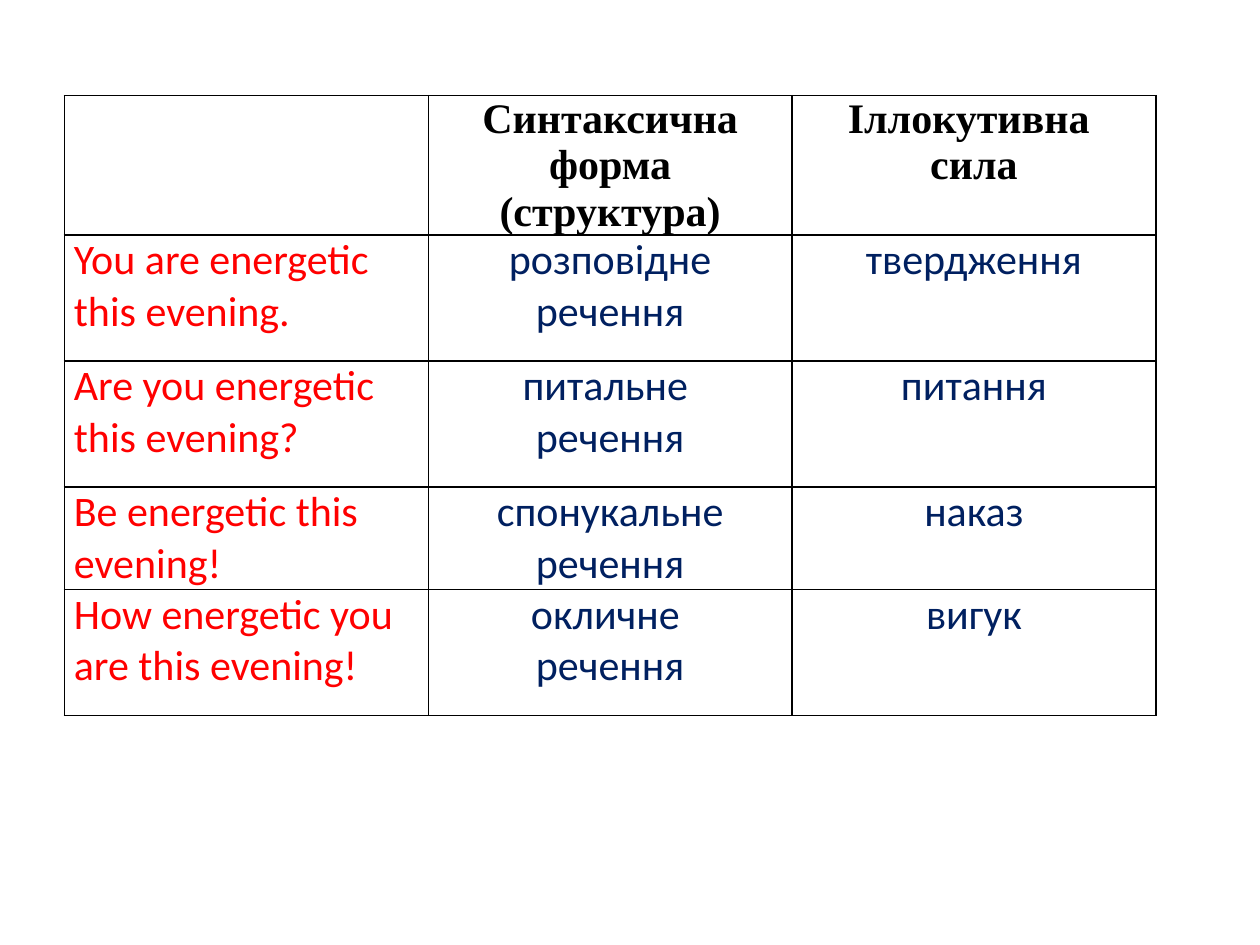
from lxml import etree
from pptx import Presentation
from pptx.dml.color import RGBColor
from pptx.enum.text import PP_ALIGN
from pptx.oxml.ns import qn
from pptx.util import Cm, Pt

LEFT, CENTER = PP_ALIGN.LEFT, PP_ALIGN.CENTER
BLANK_LAYOUT = 6
COLORS = {"header": "000000", "example": "FF0000", "answer": "002060",
          "border": "000000"}

# Each cell is a list of paragraphs
ROWS = [
    [[], ["Синтаксична форма (структура)"], ["Іллокутивна ", "сила"]],
    [["You are energetic this evening."], ["розповідне речення"], ["твердження"]],
    [["Are you energetic this evening?"], ["питальне ", "речення"], ["питання"]],
    [["Be energetic this evening!"], ["спонукальне речення"], ["наказ"]],
    [["How energetic you are this evening!"], ["окличне ", "речення"], ["вигук"]],
]
ROW_HEIGHTS = [2.54, 2.54, 2.54, 1.27, 2.54]


def write_text(tf, lines, color, font="Calibri", size=24, bold=False, align=CENTER):
    for i, line in enumerate(lines):
        p = tf.paragraphs[0] if i == 0 else tf.add_paragraph()
        p.alignment = align
        r = p.add_run()
        r.text = line
        r.font.name = font
        r.font.size = Pt(size)
        r.font.bold = bold
        r.font.color.rgb = RGBColor.from_string(COLORS[color])


def format_cell(cell):
    cell.margin_left = cell.margin_right = Cm(0.19)
    cell.margin_top = cell.margin_bottom = 0
    tc_pr = cell._tc.get_or_add_tcPr()
    for side in ("lnL", "lnR", "lnT", "lnB"):
        ln = etree.SubElement(tc_pr, qn(f"a:{side}"), w=str(Pt(1)))
        fill = etree.SubElement(ln, qn("a:solidFill"))
        etree.SubElement(fill, qn("a:srgbClr"), val=COLORS["border"])
    cell.fill.background()


def add_sentence_table(slide, left, top, width, height):
    n_cols = len(ROWS[0])
    table = slide.shapes.add_table(len(ROWS), n_cols, left, top, width, height).table
    table.first_row = table.horz_banding = False
    for col in table.columns:
        col.width = width // n_cols
    for row, row_height in zip(table.rows, ROW_HEIGHTS):
        row.height = Cm(row_height)

    for i, row in enumerate(ROWS):
        for j, lines in enumerate(row):
            cell = table.cell(i, j)
            format_cell(cell)
            if i == 0:
                write_text(cell.text_frame, lines, "header",
                           font="Times New Roman", bold=True)
            elif j == 0:
                write_text(cell.text_frame, lines, "example", align=LEFT)
            else:
                write_text(cell.text_frame, lines, "answer")


def main():
    prs = Presentation()
    prs.slide_width, prs.slide_height = Cm(25.4), Cm(19.05)
    slide = prs.slides.add_slide(prs.slide_layouts[BLANK_LAYOUT])
    add_sentence_table(slide, Cm(1.3), Cm(1.93), Cm(22), Cm(sum(ROW_HEIGHTS)))
    prs.save("out.pptx")


if __name__ == "__main__":
    main()
